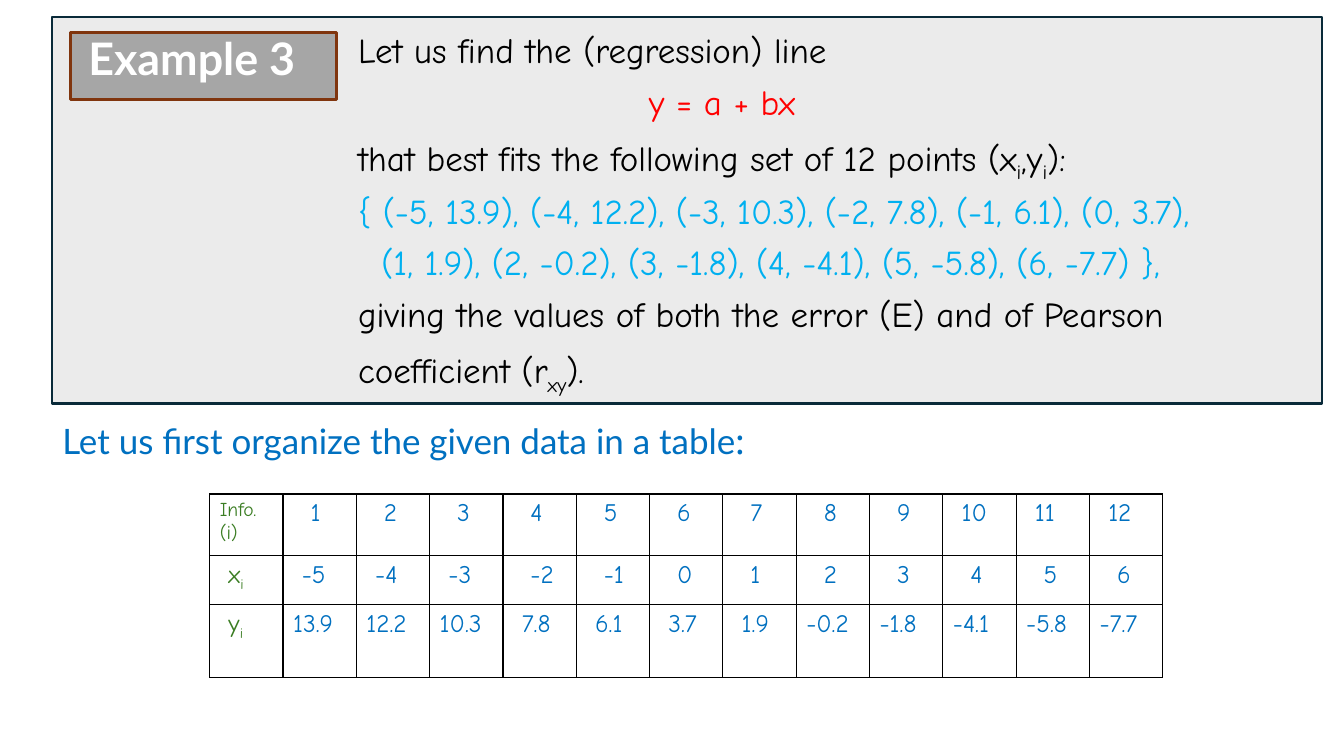
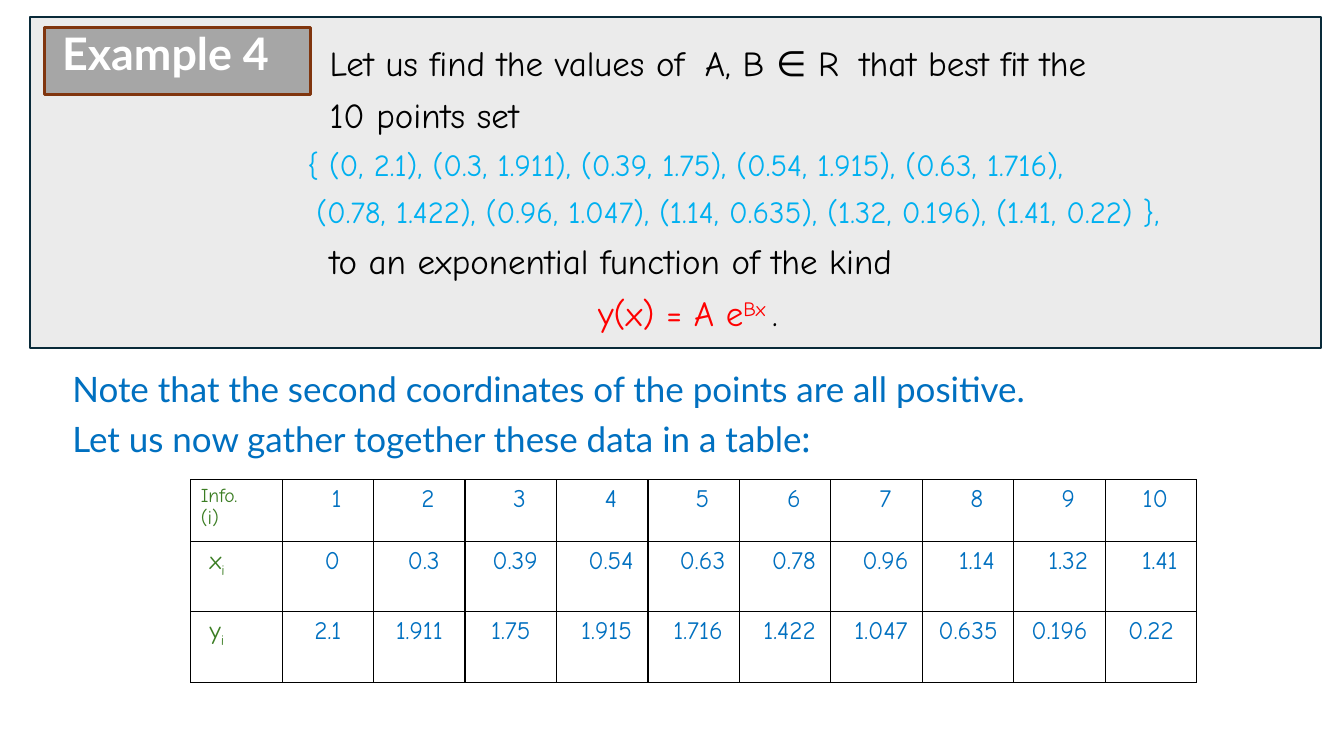
from lxml import etree
from pptx import Presentation
from pptx.dml.color import RGBColor
from pptx.enum.shapes import MSO_SHAPE
from pptx.enum.text import MSO_ANCHOR, PP_ALIGN
from pptx.oxml.ns import qn
from pptx.util import Inches, Pt

RECTANGLE = MSO_SHAPE.RECTANGLE
TOP = MSO_ANCHOR.TOP
LEFT, CENTER = PP_ALIGN.LEFT, PP_ALIGN.CENTER

SLIDE_W, SLIDE_H = Inches(13.33), Inches(7.5)
COL, ROW = SLIDE_W / 160, SLIDE_H / 90
CELL_STEP = 1.04
BADGE_W, BADGE_H = 31.7, 8.04

BLACK, RED, SKY, BLUE, GREEN = "000000", "FF0000", "00B0F0", "0070C0", "3B7D23"
PANEL, PANEL_EDGE = "D9D9D9", "092A39"
BADGE, BADGE_EDGE, WHITE = "A6A6A6", "80350E", "FFFFFF"
HAND, SANS, COLON_FONT = "Comic Neue", "Lato", "Noto Sans CJK JP"

BODY = {"name": HAND, "size": 25, "color": BLACK}
FORMULA = {**BODY, "color": RED}
POINTS = {**BODY, "color": SKY}
SMALL_POINTS = {**POINTS, "size": 22}
SUB = {**BODY, "baseline": -25000}
WIDE_SPACE = {**BODY, "spc": 650}
STATEMENT = {"name": SANS, "size": 25, "color": BLUE}
BADGE_TEXT = {"name": SANS, "size": 32, "color": WHITE, "bold": True}
VALUE = {"name": HAND, "size": 18, "color": BLUE}
LABEL = {**VALUE, "color": GREEN}
LABEL_SUB = {**LABEL, "baseline": -25000}
INFO = {**LABEL, "size": 14}


def rgb(value):
    return RGBColor.from_string(value)


def cols(count):
    return round(count * COL)


def rows(count):
    return round(count * ROW)


def place(box):
    left, top, width, height = box
    return cols(left), rows(top), cols(width), rows(height)


def add_runs(paragraph, runs):
    for words, style in runs:
        run = paragraph.add_run()
        run.text = words
        for key, value in style.items():
            if key == "color":
                run.font.color.rgb = rgb(value)
            elif key in ("baseline", "spc"):
                run.font._element.set(key, str(value))
            else:
                setattr(run.font, key, Pt(value) if key == "size" else value)


def write(frame, lines, align=LEFT, spaced=True):
    for index, (indent, runs) in enumerate(lines):
        paragraph = frame.add_paragraph() if index else frame.paragraphs[0]
        paragraph.alignment = align
        if spaced:
            paragraph.line_spacing = 0.9
            paragraph.space_before = Pt(10)
        if indent:
            paragraph._p.get_or_add_pPr().set("marL", str(cols(indent)))
        add_runs(paragraph, runs)


def add_text(slide, box, lines, inset=None):
    frame = slide.shapes.add_textbox(*place(box)).text_frame
    frame.word_wrap = True
    if inset is not None:
        for side in ("left", "top", "right", "bottom"):
            setattr(frame, f"margin_{side}", inset)
    write(frame, lines)


def add_block(slide, box, fill, edge, weight):
    block = slide.shapes.add_shape(RECTANGLE, *place(box))
    block.shadow.inherit = False
    block.fill.solid()
    block.fill.fore_color.rgb = rgb(fill)
    block.line.color.rgb = rgb(edge)
    block.line.width = Pt(weight)
    return block


def add_problem(slide, box, title, badge_offset, text_offset, lines):
    left, top, width, height = box
    panel = add_block(slide, box, PANEL, PANEL_EDGE, 1.5)
    color = panel.fill._xPr.find(qn("a:solidFill"))[0]
    etree.SubElement(color, qn("a:alpha")).set("val", "50000")

    dx, dy = text_offset
    add_text(slide, (left + dx, top + dy, width - dx, height - dy), lines, inset=0)

    dx, dy = badge_offset
    badge = add_block(slide, (left + dx, top + dy, BADGE_W, BADGE_H),
                      BADGE, BADGE_EDGE, 2)
    frame = badge.text_frame
    frame.vertical_anchor = TOP
    frame.margin_right = cols(4)
    write(frame, [(0, [(title, BADGE_TEXT)])], CENTER)
    frame.paragraphs[0].space_before = Pt(0)


def add_statement(slide, left, top, sentence, colon=True):
    runs = [(sentence, STATEMENT)]
    if colon:
        runs.append((":", {**STATEMENT, "name": COLON_FONT}))
    add_text(slide, (left, top, 152, 6), [(0, runs)])


def border(cell):
    properties = cell._tc.get_or_add_tcPr()
    for position, side in enumerate(("lnL", "lnR", "lnT", "lnB")):
        edge = etree.Element(qn(f"a:{side}"), w=str(Pt(1)))
        fill = etree.SubElement(edge, qn("a:solidFill"))
        etree.SubElement(fill, qn("a:srgbClr"), val=BLACK)
        properties.insert(position, edge)


def add_data(slide, left, top, width, heights, xs, ys, steps, align):
    count = len(xs)
    labels = [
        [(0, [("Info.", INFO)]), (0, [("(i)", INFO)])],
        *[[(CELL_STEP, [(name, LABEL), ("i", LABEL_SUB)])] for name in "xy"],
    ]
    series = [[str(i) for i in range(1, count + 1)], xs, ys]
    table = slide.shapes.add_table(
        3, count + 1, *place((left, top, width, sum(heights)))).table
    table.first_row = table.horz_banding = False
    for column in table.columns:
        column.width = cols(width / (count + 1))
    for r, height in enumerate(heights):
        table.rows[r].height = rows(height)
        write(table.cell(r, 0).text_frame, labels[r], spaced=False)
        for c, (value, step) in enumerate(zip(series[r], steps[r]), 1):
            line = (int(step) * CELL_STEP, [(value, VALUE)])
            write(table.cell(r, c).text_frame, [line], align, spaced=False)
    for cell in table.iter_cells():
        cell.fill.background()
        border(cell)


def build_linear(slide):
    add_problem(slide, (6.24, 2.04, 151.1, 46), "Example 3", (2.16, 1.8), (36.4, 1.92), [
        (0, [("Let us find the (regression) line", BODY)]),
        (34.6, [("y = a + bx", FORMULA)]),
        (0, [("that best fits the following set of 12 points (x", BODY),
             ("i", SUB), (",y", BODY), ("i", SUB), ("):", BODY)]),
        (0, [("{ (-5, 13.9), (-4, 12.2), (-3, 10.3), (-2, 7.8), (-1, 6.1), (0, 3.7),",
              POINTS)]),
        (2.76, [("(1, 1.9), (2, -0.2), (3, -1.8), (4, -4.1), (5, -5.8), (6, -7.7) },",
                 POINTS)]),
        (0, [("giving the values of both the error (E) and of Pearson", BODY)]),
        (0, [("coefficient (r", BODY), ("xy", SUB), (").", BODY)]),
    ])
    add_statement(slide, 6.24, 49.9, "Let us first organize the given data in a table")
    add_data(slide, 24.96, 58.8, 113.5, (7.32, 5.88, 8.64),
             [str(x) for x in range(-5, 7)],
             "13.9 12.2 10.3 7.8 6.1 3.7 1.9 -0.2 -1.8 -4.1 -5.8 -7.7".split(),
             ("222222222111", "111222222222", "000111100000"), LEFT)


def build_exponential(slide):
    add_problem(slide, (3.6, 2.04, 153.7, 39.4), "Example 4", (1.68, 1.2), (33, 3.5), [
        (2.64, [("Let us find the values of", BODY), (" ", WIDE_SPACE),
                ("A, B ∈ R", BODY), (" ", WIDE_SPACE), ("that best fit the", BODY)]),
        (2.64, [("10 points set", BODY)]),
        (0, [("{ (0, 2.1), (0.3, 1.911), (0.39, 1.75), (0.54, 1.915), (0.63, 1.716),",
              SMALL_POINTS)]),
        (1.08, [("(0.78, 1.422), (0.96, 1.047), (1.14, 0.635), (1.32, 0.196), "
                 "(1.41, 0.22) },", SMALL_POINTS)]),
        (2.64, [("to an exponential function of the kind", BODY)]),
        (34.6, [("y(x) = A e", FORMULA), ("Bx ", {**FORMULA, "baseline": 30000}),
                (".", BODY)]),
    ])
    add_statement(slide, 7.44, 43.7,
                  "Note that the second coordinates of the points are all positive.",
                  colon=False)
    add_statement(slide, 7.44, 49.7, "Let us now gather together these data in a table")
    add_data(slide, 22.7, 57.1, 119.8, (7.4, 8.35, 8.45),
             "0 0.3 0.39 0.54 0.63 0.78 0.96 1.14 1.32 1.41".split(),
             "2.1 1.911 1.75 1.915 1.716 1.422 1.047 0.635 0.196 0.22".split(),
             ("2222222221", "1112222222", "0001111000"), CENTER)


def main():
    deck = Presentation()
    deck.slide_width, deck.slide_height = SLIDE_W, SLIDE_H
    for build in (build_linear, build_exponential):
        build(deck.slides.add_slide(deck.slide_layouts[6]))
    deck.save("out.pptx")


if __name__ == "__main__":
    main()
